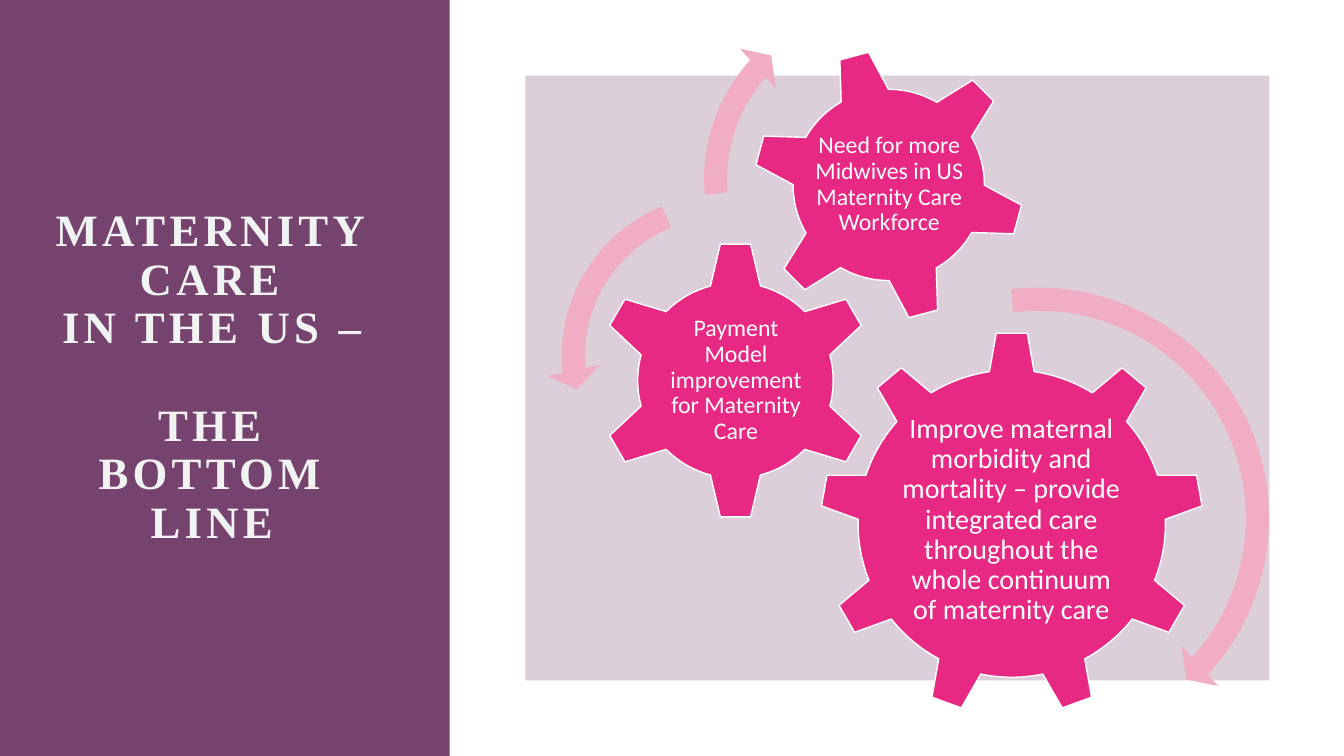
"""Build the maternity care slide with its three gears."""
from lxml.etree import SubElement
from pptx import Presentation
from pptx.dml.color import RGBColor
from pptx.enum.shapes import MSO_SHAPE as Kind
from pptx.enum.text import MSO_ANCHOR as Anchor, MSO_AUTO_SIZE as Auto, PP_ALIGN as Align
from pptx.oxml.ns import qn
from pptx.util import Inches, Pt

PLUM = RGBColor(0x76, 0x42, 0x6E)
PINK = RGBColor(0xE7, 0x29, 0x83)
ROSE = RGBColor(0xF1, 0xAD, 0xC1)
PALE = RGBColor(0xF0, 0xF3, 0xF2)
WHITE = RGBColor(0xFF, 0xFF, 0xFF)

GEARS = [
    (Kind.GEAR_9, (8.13, 3.29, 3.81), 0, (8.89, 4.18, 2.28, 1.96), 20, 0.03,
     "Improve maternal morbidity and mortality – provide integrated care "
     "throughout the whole continuum of maternity care"),
    (Kind.GEAR_6, (5.91, 2.39, 2.77), 0, (6.61, 3.09, 1.38, 1.37), 17, 0.02,
     "Payment Model improvement for Maternity Care"),
    (Kind.GEAR_6, (7.46, 0.48, 2.71), 345, (8.06, 1.07, 1.52, 1.52), 17, 0.02,
     "Need for more Midwives in US Maternity Care Workforce"),
]
ARROWS = [
    (Kind.CIRCULAR_ARROW, (7.86, 2.7, 4.88),
     (0.047, 2.99, 25.512, 157.877, 0.055)),
    (Kind.LEFT_CIRCULAR_ARROW, (5.42, 1.77, 3.54),
     (0.065, 4.3, 104.891, 148.378, 0.075)),
    (Kind.CIRCULAR_ARROW, (6.83, -0.13, 3.82),
     (0.06, 3.941, 133.138, 105.082, 0.07)),
]


def add_shape(slide, kind, box, fill):
    """Add a flat shape with a plain fill and no line."""
    shape = slide.shapes.add_shape(kind, *map(Inches, box))
    shape.shadow.inherit = False
    shape.fill.solid()
    shape.fill.fore_color.rgb = fill
    shape.line.fill.background()
    return shape


def fade(shape, share):
    """Make the fill of a shape see-through."""
    color = shape.element.spPr.find(qn("a:solidFill"))[0]
    SubElement(color, qn("a:alpha")).set("val", str(int(share * 100000)))


def style(frame, font, size, color, bold=False, track=0):
    """Centre the text of a frame and format its runs."""
    frame.word_wrap = True
    frame.auto_size = Auto.NONE
    frame.vertical_anchor = Anchor.MIDDLE
    for para in frame.paragraphs:
        para.alignment = Align.CENTER
        para.line_spacing = 0.9
        for run in para.runs:
            run.font.name = font
            run.font.size = Pt(size)
            run.font.bold = bold
            run.font.color.rgb = color
            if track:
                run.font._element.set("spc", str(track * 100))


def add_title(slide):
    """Place the title on its plum panel."""
    title = slide.shapes.title
    panel = add_shape(slide, Kind.RECTANGLE, (0, 0, 4.46, 7.5), PLUM)
    title.element.addprevious(panel.element)
    title.left, title.top, title.width, title.height = map(Inches, (0.45, 1.5, 3.3, 4.5))
    frame = title.text_frame
    frame.text = "MATERNITY CARE\vIN THE US –\nTHE BOTTOM LINE"
    style(frame, "Times New Roman", 32, PALE, True, 3)
    first, last = frame.paragraphs
    first.space_before = Pt(0)
    last.space_before = Pt(35)


def add_gear(slide, kind, spot, turn, box, size, inset, text):
    """Add a gear and the label on it."""
    left, top, side = spot
    gear = add_shape(slide, kind, (left, top, side, side), PINK)
    gear.rotation = turn
    gear.line.color.rgb = WHITE
    gear.line.width = Pt(1)
    frame = slide.shapes.add_textbox(*map(Inches, box)).text_frame
    frame.margin_left = frame.margin_right = Inches(inset)
    frame.margin_top = frame.margin_bottom = Inches(inset)
    frame.text = text
    style(frame, "Calibri", size, WHITE)


def add_arrow(slide, kind, spot, bends):
    """Add a curved arrow that shows the turn of a gear."""
    left, top, side = spot
    arrow = add_shape(slide, kind, (left, top, side, side), ROSE)
    for index, bend in enumerate(bends):
        arrow.adjustments[index] = bend


def main():
    """Build the slide and save it."""
    deck = Presentation()
    deck.slide_width, deck.slide_height = Inches(13.33), Inches(7.5)
    slide = deck.slides.add_slide(deck.slide_layouts[5])
    add_title(slide)
    fade(add_shape(slide, Kind.RECTANGLE, (5.21, 0.75, 7.38, 6), PLUM), 0.25)
    for gear in GEARS:
        add_gear(slide, *gear)
    for arrow in ARROWS:
        add_arrow(slide, *arrow)
    deck.save("out.pptx")


if __name__ == "__main__":
    main()
